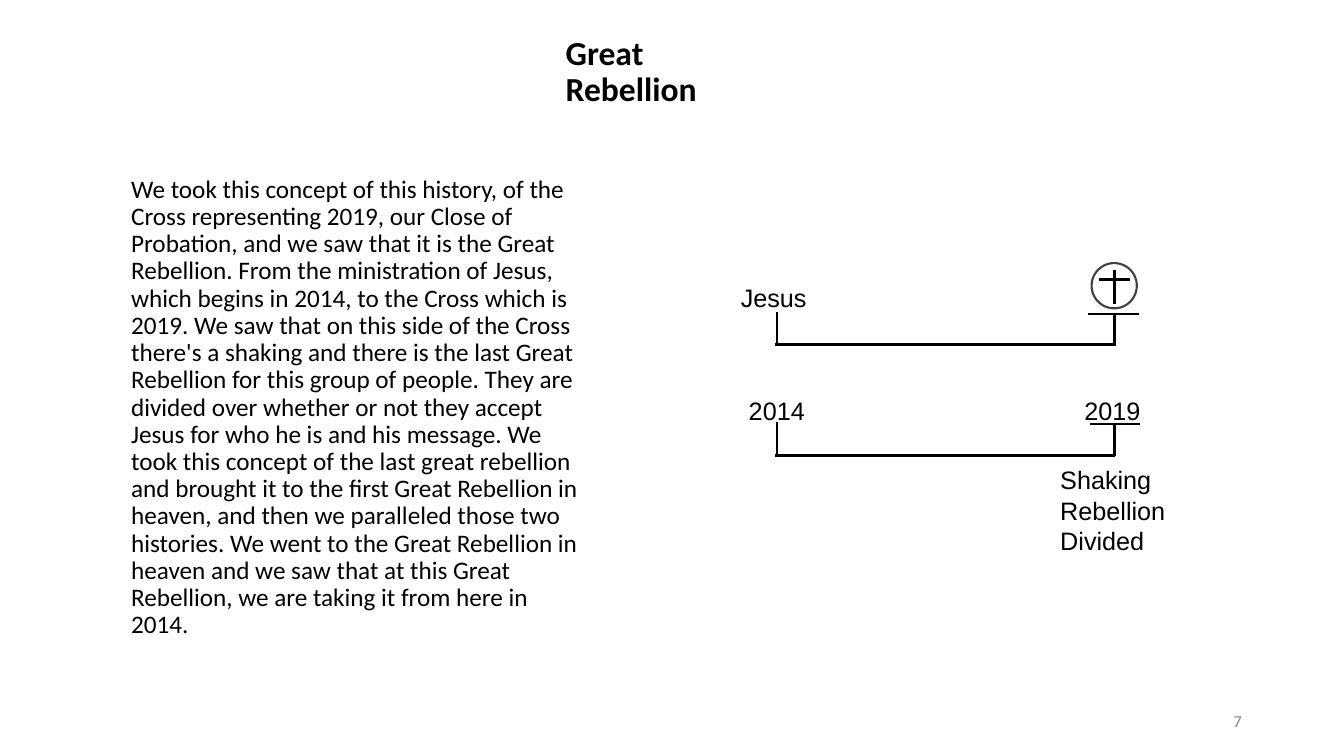
import pptx
import pptx.util
import pptx.dml.color
import pptx.enum.shapes
import pptx.enum.text
import pptx.oxml.ns
import lxml.etree

Cm, Pt = pptx.util.Cm, pptx.util.Pt
ALIGN = pptx.enum.text.PP_ALIGN
ANCHOR = pptx.enum.text.MSO_ANCHOR
BLACK = "000000"
LEFT_MARK, RIGHT_MARK = 19.58, 28.09  # 2014 and 2019 on the timelines, in cm

HISTORY = (
    "We took this concept of this history, of the Cross representing 2019, our Close of "
    "Probation, and we saw that it is the Great Rebellion. From the ministration of Jesus, "
    "which begins in 2014, to the Cross which is 2019. We saw that on this side of the Cross "
    "there's a shaking and there is the last Great Rebellion for this group of people. They "
    "are divided over whether or not they accept Jesus for who he is and his message. We took "
    "this concept of the last great rebellion and brought it to the first Great Rebellion in "
    "heaven, and then we paralleled those two histories. We went to the Great Rebellion in "
    "heaven and we saw that at this Great Rebellion, we are taking it from here in 2014."
)


def color(hex_code):
    return pptx.dml.color.RGBColor.from_string(hex_code)


def place(shape, left, top, width, height):
    shape.left, shape.top = Cm(left), Cm(top)
    shape.width, shape.height = Cm(width), Cm(height)


def write(shape, *lines, size=18, font="Calibri", ink=BLACK, bold=False, align=ALIGN.LEFT,
          anchor=ANCHOR.TOP, spacing=1.0, before=0, inset=None):
    frame = shape.text_frame
    frame.text = "\n".join(lines)
    frame.word_wrap = True
    frame.auto_size = pptx.enum.text.MSO_AUTO_SIZE.NONE
    frame.vertical_anchor = anchor
    if inset is not None:
        frame.margin_left = frame.margin_right = Cm(inset)
        frame.margin_top = frame.margin_bottom = Cm(inset)
    for paragraph in frame.paragraphs:
        paragraph.alignment = align
        paragraph.line_spacing = spacing
        paragraph.space_before = Pt(before)
        style = paragraph.runs[0].font
        style.name, style.size, style.bold = font, Pt(size), bold
        style.color.rgb = color(ink)


def remove_bullets(shape):
    for paragraph in shape.text_frame.paragraphs:
        properties = paragraph._p.get_or_add_pPr()
        properties.set("marL", "0")
        properties.set("indent", "0")
        lxml.etree.SubElement(properties, pptx.oxml.ns.qn("a:buNone"))


def add_text(shapes, box, *lines, **text_format):
    write(shapes.add_textbox(*map(Cm, box)), *lines, **text_format)


def add_label(shapes, box, *lines):
    add_text(shapes, box, *lines, font="Arial", inset=0.1)


def add_line(shapes, x1, y1, x2, y2, weight):
    line = shapes.add_connector(pptx.enum.shapes.MSO_CONNECTOR.STRAIGHT,
                                Cm(x1), Cm(y1), Cm(x2), Cm(y2))
    line.line.color.rgb = color(BLACK)
    line.line.width = Pt(weight)
    lxml.etree.SubElement(line._element.spPr, pptx.oxml.ns.qn("a:effectLst"))


def add_cross(shapes):
    cross = shapes.add_group_shape().shapes
    circle = cross.add_shape(pptx.enum.shapes.MSO_SHAPE.OVAL,
                             Cm(27.51), Cm(6.63), Cm(1.14), Cm(1.14))
    circle.shadow.inherit = False
    circle.fill.solid()
    circle.fill.fore_color.rgb = color("FFFFFF")
    circle.line.color.rgb = color("404040")
    circle.line.width = Pt(1.5)
    add_line(cross, RIGHT_MARK, 6.81, RIGHT_MARK, 7.67, 2.25)
    add_line(cross, 27.69, 7.04, 28.47, 7.04, 2.25)


def add_timeline(shapes, top, base):
    timeline = shapes.add_group_shape().shapes
    add_line(timeline, LEFT_MARK, top, LEFT_MARK, base, 2)
    add_line(timeline, LEFT_MARK - 0.05, base, RIGHT_MARK, base, 2)
    add_line(timeline, RIGHT_MARK, top + 0.03, RIGHT_MARK, base + 0.02, 2)


def main():
    presentation = pptx.Presentation()
    presentation.slide_width, presentation.slide_height = Cm(33.87), Cm(19.05)
    slide = presentation.slides.add_slide(presentation.slide_layouts[1])
    shapes = slide.shapes

    # Title and history
    title, history = shapes.title, slide.placeholders[1]
    place(title, 14, 1.19, 5.89, 1.27)
    write(title, "Great Rebellion", size=24, bold=True, anchor=ANCHOR.MIDDLE, spacing=0.9)
    place(history, 3.05, 4.32, 12.09, 12.09)
    write(history, HISTORY, spacing=0.9, before=10)
    remove_bullets(history)

    # Page number
    add_text(shapes, (23.93, 17.65, 7.62, 1.02), "7", size=12, ink="8C8C8C",
             align=ALIGN.RIGHT, anchor=ANCHOR.MIDDLE)

    # Parallel timelines
    add_cross(shapes)
    add_timeline(shapes, 7.87, 8.69)
    add_timeline(shapes, 10.64, 11.48)

    # Waymark labels
    add_label(shapes, (18.57, 7.01, 2.06, 0.91), "Jesus")
    add_label(shapes, (18.77, 9.86, 1.7, 0.91), "2014")
    add_label(shapes, (27.23, 9.86, 1.7, 0.91), "2019")
    add_label(shapes, (26.62, 11.61, 3, 2.64), "Shaking", "Rebellion", "Divided")

    # Bars over the closing marks
    for left, height in ((27.43, 7.92), (27.46, 10.69)):
        add_line(shapes, left, height, left + 1.27, height, 1.5)

    presentation.save("out.pptx")


if __name__ == "__main__":
    main()
